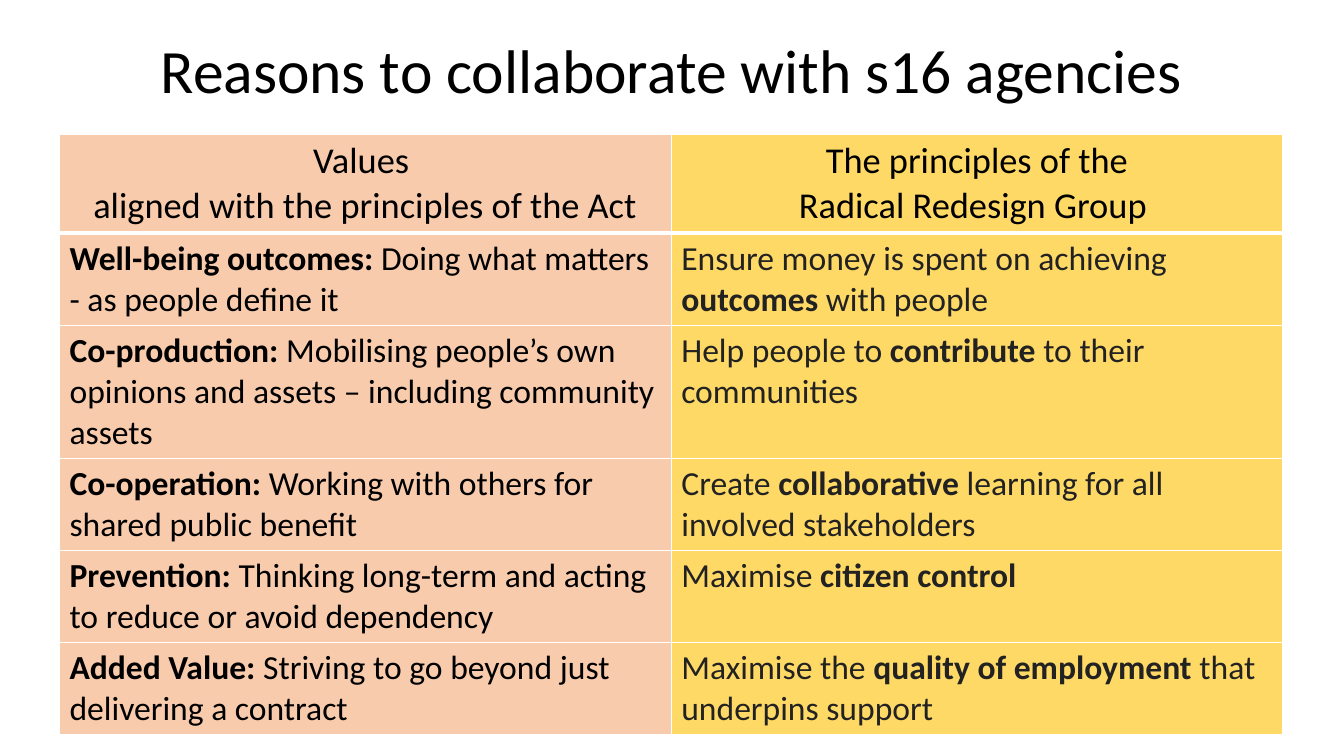
"""Build a slide that sets the values of the Act beside the Radical Redesign principles."""
from lxml.etree import SubElement
from pptx import Presentation
from pptx.dml.color import RGBColor
from pptx.enum.text import MSO_ANCHOR, PP_ALIGN
from pptx.oxml.ns import qn
from pptx.util import Pt

TITLE = "Reasons to collaborate with s16 agencies"
HEADS = [
    ["Values ", "aligned with the principles of the Act"],
    ["The principles of the", "Radical Redesign Group "],
]
ROWS = [
    ("*Well-being outcomes: *Doing what matters - as people define it",
     "Ensure money is spent on achieving *outcomes *with people"),
    ("*Co-production: *Mobilising people’s own opinions and assets – including community assets",
     "Help people to *contribute* to their communities"),
    ("*Co-operation: *Working with others for shared public benefit",
     "Create *collaborative* learning for all involved stakeholders"),
    ("*Prevention: *Thinking long-term and acting to reduce or avoid dependency",
     "Maximise *citizen control*"),
    ("*Added Value: *Striving to go beyond just delivering a contract",
     "Maximise the *quality of employment *that underpins support"),
]
THEME = {
    "font": "Calibri", "title": 44, "head": 26, "body": 24,
    "ink": "000000", "inks": ["000000", "222222"],
    "fills": ["F8CBAD", "FFD966"], "line": "FFFFFF",
}
HEIGHTS = [70.7, 65.8, 95.1, 65.8, 65.8, 65.8]
LEFT, TOP, WIDTH = 42.5, 95.8, 874
EDGES = {"lnL": 1, "lnR": 1, "lnT": 1, "lnB": 3}


def style(para, size, ink, align):
    para.alignment = align
    para.font.name = THEME["font"]
    para.font.size = Pt(size)
    para.font.color.rgb = RGBColor.from_string(ink)


def write(para, text):
    for spot, part in enumerate(text.split("*")):
        if part:
            run = para.add_run()
            run.text = part
            run.font.bold = spot % 2 == 1


def edge(cell):
    props = cell._tc.get_or_add_tcPr()
    for tag, width in EDGES.items():
        line = SubElement(props, qn(f"a:{tag}"), w=str(Pt(width)))
        fill = SubElement(line, qn("a:solidFill"))
        SubElement(fill, qn("a:srgbClr"), val=THEME["line"])


def paint(cell, col):
    cell.fill.solid()
    cell.fill.fore_color.rgb = RGBColor.from_string(THEME["fills"][col])


def add_title(slide):
    box = slide.shapes.add_textbox(Pt(66), Pt(0), Pt(828), Pt(104.4))
    frame = box.text_frame
    frame.word_wrap = True
    frame.vertical_anchor = MSO_ANCHOR.MIDDLE
    para = frame.paragraphs[0]
    para.line_spacing = 0.9
    write(para, TITLE)
    style(para, THEME["title"], THEME["ink"], PP_ALIGN.CENTER)


def add_grid(slide):
    table = slide.shapes.add_table(
        len(HEIGHTS), len(HEADS), Pt(LEFT), Pt(TOP), Pt(WIDTH), Pt(sum(HEIGHTS))).table
    for row, height in zip(table.rows, HEIGHTS):
        row.height = Pt(height)
    for col, lines in enumerate(HEADS):
        cell = table.cell(0, col)
        edge(cell)
        paint(cell, col)
        frame = cell.text_frame
        for spot, line in enumerate(lines):
            para = frame.add_paragraph() if spot else frame.paragraphs[0]
            write(para, line)
            style(para, THEME["head"], THEME["ink"], PP_ALIGN.CENTER)
    for row, texts in enumerate(ROWS, 1):
        for col, text in enumerate(texts):
            cell = table.cell(row, col)
            paint(cell, col)
            para = cell.text_frame.paragraphs[0]
            write(para, text)
            style(para, THEME["body"], THEME["inks"][col], PP_ALIGN.LEFT)


def main():
    deck = Presentation()
    deck.slide_width, deck.slide_height = Pt(960), Pt(540)
    slide = deck.slides.add_slide(deck.slide_layouts[6])
    add_title(slide)
    add_grid(slide)
    deck.save("out.pptx")


if __name__ == "__main__":
    main()
